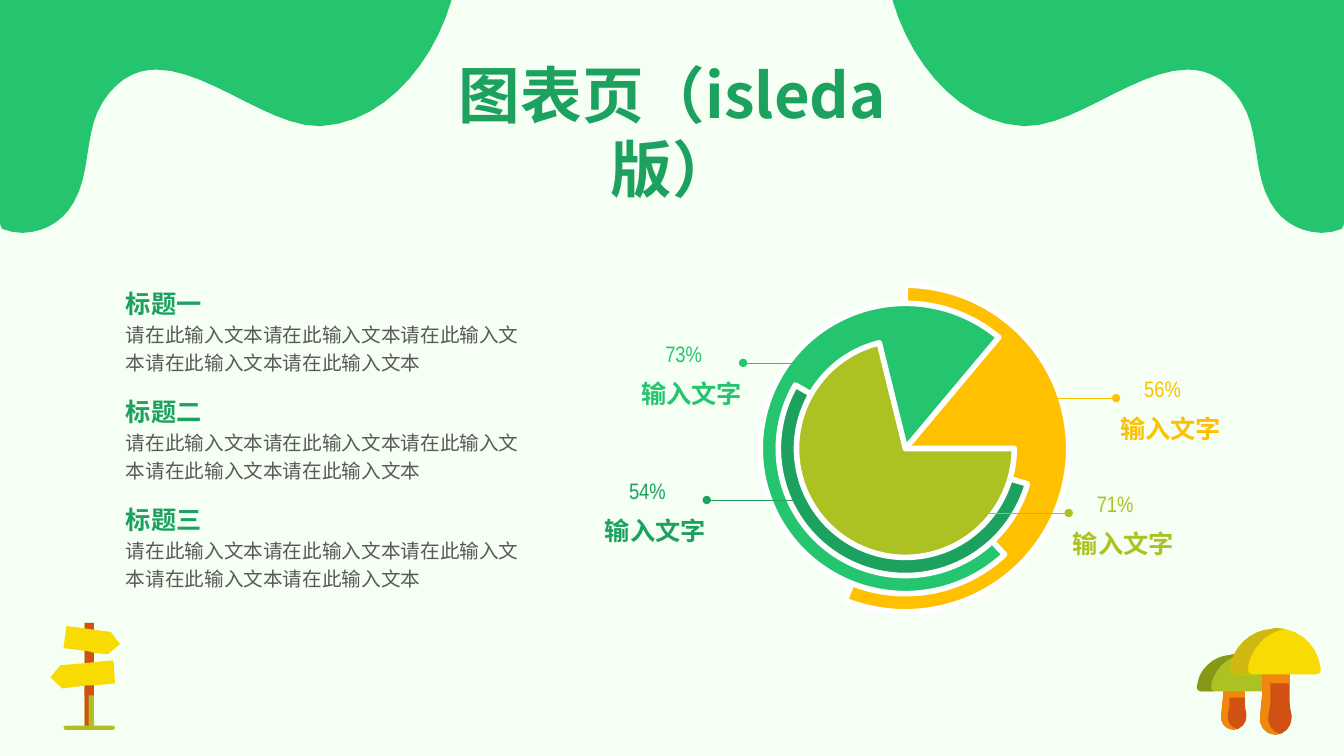
"""Build a chart slide with layered pies, callouts, captions and woodland decoration."""
from dataclasses import dataclass
from math import ceil, dist, sqrt

from lxml import etree
from pptx import Presentation
from pptx.dml.color import RGBColor
from pptx.enum.shapes import MSO_CONNECTOR, MSO_SHAPE
from pptx.enum.text import MSO_ANCHOR, MSO_AUTO_SIZE, PP_ALIGN
from pptx.oxml.ns import qn
from pptx.shapes.autoshape import Shape
from pptx.shapes.shapetree import GroupShapes
from pptx.util import Cm, Length, Pt

RECT, ROUND, PIE = MSO_SHAPE.RECTANGLE, MSO_SHAPE.ROUNDED_RECTANGLE, MSO_SHAPE.PIE
STRAIGHT = MSO_CONNECTOR.STRAIGHT
TOP, MIDDLE = MSO_ANCHOR.TOP, MSO_ANCHOR.MIDDLE
LEFT, CENTER = PP_ALIGN.LEFT, PP_ALIGN.CENTER
GROW = MSO_AUTO_SIZE.SHAPE_TO_FIT_TEXT

MINT = RGBColor(0xF5, 0xFF, 0xF3)
WHITE = RGBColor(0xFF, 0xFF, 0xFF)
GREEN = RGBColor(0x25, 0xC5, 0x6F)
FOREST = RGBColor(0x1C, 0xA1, 0x5F)
AMBER = RGBColor(0xFF, 0xC0, 0x00)
LIME = RGBColor(0xAD, 0xC2, 0x22)
OLIVE = RGBColor(0x87, 0x98, 0x19)
YELLOW = RGBColor(0xF8, 0xDB, 0x03)
MUSTARD = RGBColor(0xCF, 0xB8, 0x0F)
ORANGE = RGBColor(0xF0, 0x88, 0x0D)
RUST = RGBColor(0xD1, 0x51, 0x12)
GREY = RGBColor(0x59, 0x59, 0x59)

CJK, NARROW = "Noto Sans CJK JP", "Arial Narrow"
WIDTH, HEIGHT = 13.33, 7.5
Outline = list[tuple[float, ...]]

WAVE: Outline = [
    (0.22, 2.31), (0.12, 2.3), (0.02, 2.27), (0, 2.22), (0, -2.38), (3.18, -2.38),
    (4.06, -2.02, 4.72, -1.13, 4.51, -0.13), (4.38, 0.5, 3.88, 1.21, 3.19, 1.25),
    (3.15, 1.25), (2.67, 1.25, 2.06, 0.69, 1.55, 0.69),
    (1.35, 0.69, 1.17, 0.78, 1.02, 1.01), (0.83, 1.31, 0.91, 1.7, 0.73, 2.01),
    (0.64, 2.17, 0.49, 2.27, 0.32, 2.3)]
UPPER_SIGN: Outline = [(0.66, 6.21), (0.63, 6.43), (0.87, 6.46), (0.95, 6.48), (1.07, 6.49),
                       (1.19, 6.39), (1.1, 6.27)]
LOWER_SIGN: Outline = [(1.12, 6.55), (0.83, 6.58), (0.6, 6.6), (0.5, 6.72), (0.62, 6.83),
                       (0.86, 6.8), (0.94, 6.8), (1.14, 6.78), (1.13, 6.59)]

CAP_EDGE: Outline = [(0.45, 0), (0.41, 0.01), (0.25, 0.02, 0.11, 0.12, 0.04, 0.26),
                     (0.02, 0.31, 0.01, 0.36, 0, 0.41), (0, 0.43, 0.02, 0.46, 0.05, 0.46)]
CAP = CAP_EDGE + [(0.86, 0.46), (0.89, 0.46, 0.9, 0.43, 0.9, 0.41), (0.88, 0.18, 0.69, 0, 0.45, 0)]
CAP_SHADE = CAP_EDGE + [
    (0.22, 0.46), (0.19, 0.46, 0.17, 0.43, 0.18, 0.41), (0.18, 0.36, 0.19, 0.31, 0.22, 0.26),
    (0.28, 0.13, 0.4, 0.04, 0.54, 0.01)]
STEM_EDGE: Outline = [(0.05, -0.6), (0.05, -0.41), (0.04, -0.31), (0.03, -0.2),
                      (0, -0.1, 0.08, 0, 0.18, 0)]
STEM = STEM_EDGE + [(0.27, 0, 0.34, -0.08, 0.34, -0.16), (0.34, -0.2),
                    (0.32, -0.27, 0.32, -0.34, 0.32, -0.41), (0.32, -0.6)]
STEM_SHADE = STEM_EDGE + [(0.22, -0.01), (0.14, -0.03, 0.09, -0.11, 0.11, -0.2),
                          (0.13, -0.31), (0.13, -0.41), (0.13, -0.6)]
COLLAR: Outline = [(0.2, -0.04), (0.05, 0), (0.05, 0.09), (0.32, 0.09), (0.32, 0)]


@dataclass
class Slice:
    color: RGBColor
    diameter: float
    start: float
    end: float


@dataclass
class Callout:
    color: RGBColor
    percent: str
    start_x: float
    dot_x: float
    y: float


@dataclass
class Mushroom:
    cap: tuple[float, float]
    stem: tuple[float, float]
    stem_top: float
    scale: float
    color: RGBColor
    shade: RGBColor


SLICES = [Slice(AMBER, 3.24, 270, 111.6), Slice(GREEN, 2.88, 46.92, 310),
          Slice(FOREST, 2.52, 16.15, 210), Slice(LIME, 2.16, 0, 256.15)]
CALLOUTS = [Callout(AMBER, "56%", 9.93, 11.07, 3.95), Callout(GREEN, "73%", 8.13, 7.37, 3.6),
            Callout(FOREST, "54%", 7.94, 7.01, 4.96), Callout(LIME, "71%", 9.47, 10.6, 5.09)]
MUSHROOMS = [Mushroom((11.87, 6.49), (12.09, 7.24), 6.85, 0.8, LIME, OLIVE),
             Mushroom((12.2, 6.23), (12.47, 7.29), 6.69, 1, YELLOW, MUSTARD)]
POST = [(LIME, 0.09, 6.18, 7.22), (RUST, 0.04, 6.81, 7.22), (RUST, 0.09, 6.75, 6.9),
        (RUST, 0.09, 6.18, 6.25), (RUST, 0.09, 6.4, 6.65)]


def cm(inches: float) -> Length:
    """Turn inches into a centimetre length."""
    return Cm(inches * 2.54)


def paint(sp: Shape, color: RGBColor) -> None:
    """Give a shape a plain fill without line or shadow."""
    sp.shadow.inherit = False
    sp.fill.solid()
    sp.fill.fore_color.rgb = color
    sp.line.fill.background()


def add_block(shapes: GroupShapes, kind: MSO_SHAPE, x: float, y: float, w: float, h: float,
              color: RGBColor) -> Shape:
    """Add a filled preset shape."""
    sp = shapes.add_shape(kind, cm(x), cm(y), cm(w), cm(h))
    paint(sp, color)
    return sp


def add_outline(shapes: GroupShapes, outline: Outline, color: RGBColor,
                origin: tuple[float, float] = (0, 0), scale_x: float = 1, scale_y: float = 1,
                top: float = -HEIGHT) -> None:
    """Add a closed outline whose six-number entries are Bezier curves."""
    points = [outline[0]]
    for entry in outline[1:]:
        if len(entry) == 2:
            points.append(entry)
            continue
        curve = points[-1] + entry
        steps = ceil(8 * sqrt(dist(curve[:2], curve[-2:])))
        for t in (n / steps for n in range(1, steps + 1)):
            weights = ((1 - t) ** 3, 3 * t * (1 - t) ** 2, 3 * t * t * (1 - t), t ** 3)
            points.append(tuple(sum(w * c for w, c in zip(weights, curve[axis::2])) for axis in (0, 1)))
    placed = [(cm(origin[0] + scale_x * x), cm(max(top, origin[1] + scale_y * y))) for x, y in points]
    builder = shapes.build_freeform(*placed[0])
    builder.add_line_segments(placed[1:], close=True)
    paint(builder.convert_to_shape(), color)


def add_text(shapes: GroupShapes, text: str, x: float, y: float, w: float, h: float, size: float,
             color: RGBColor, font: str = CJK, bold: bool = False, align: PP_ALIGN = LEFT,
             anchor: MSO_ANCHOR = MIDDLE, inset: tuple[float, float] = (0.1, 0.1),
             wrap: bool = False, spacing: float = 1, after: float = 0) -> Shape:
    """Add a one-paragraph text box."""
    sp = shapes.add_textbox(cm(x), cm(y), cm(w), cm(h))
    tf = sp.text_frame
    tf.word_wrap, tf.vertical_anchor = wrap, anchor
    tf.margin_left = tf.margin_right = cm(inset[0])
    tf.margin_top = tf.margin_bottom = cm(inset[1])
    p = tf.paragraphs[0]
    p.text, p.alignment, p.line_spacing, p.space_after = text, align, spacing, Pt(after)
    p.font.size, p.font.bold, p.font.name = Pt(size), bold, font
    p.font.color.rgb = color
    etree.SubElement(p._p.pPr.find(qn("a:defRPr")), qn("a:ea"), typeface=font)
    return sp


def add_slice(shapes: GroupShapes, pie: Slice) -> None:
    """Add one white-edged pie around the common centre."""
    d = pie.diameter
    sp = add_block(shapes, PIE, 8.98 - d / 2, 4.45 - d / 2, d, d, pie.color)
    sp.adjustments[0], sp.adjustments[1] = pie.start * 0.6, pie.end * 0.6
    sp.line.color.rgb, sp.line.width = WHITE, Pt(4)


def add_callout(shapes: GroupShapes, c: Callout) -> None:
    """Add a dotted leader line with its percentage and label."""
    line = shapes.add_connector(STRAIGHT, cm(c.start_x), cm(c.y), cm(c.dot_x), cm(c.y))
    line.line.color.rgb, line.line.width = c.color, Pt(0.5)
    props = line._element.spPr
    etree.SubElement(props.find(qn("a:ln")), qn("a:tailEnd"), type="oval")
    etree.SubElement(props, qn("a:effectLst"))
    x = c.dot_x + (0.03 if c.dot_x > c.start_x else -1.02)
    add_text(shapes, c.percent, x + 0.15, c.y - 0.35, 0.72, 0.51, 16, c.color, NARROW)
    add_text(shapes, "输入文字", x, c.y + 0.17, 1.02, 0.27, 18, c.color, bold=True,
             align=CENTER, inset=(0, 0))


def add_mushroom(shapes: GroupShapes, m: Mushroom) -> None:
    """Add a mushroom from stem to cap."""
    for outline, color in ((STEM, RUST), (STEM_SHADE, ORANGE)):
        add_outline(shapes, outline, color, m.stem, m.scale, m.scale, m.stem_top)
    add_outline(shapes, COLLAR, ORANGE, (m.stem[0], m.stem_top), m.scale, m.scale)
    for outline, color in ((CAP, m.color), (CAP_SHADE, m.shade)):
        add_outline(shapes, outline, color, m.cap, m.scale, m.scale)


def main() -> None:
    """Draw the slide and save it."""
    prs = Presentation()
    prs.slide_width, prs.slide_height = cm(WIDTH), cm(HEIGHT)
    s = prs.slides.add_slide(prs.slide_layouts[6])
    s.background.fill.solid()
    s.background.fill.fore_color.rgb = MINT
    add_outline(s.shapes, WAVE, GREEN, (WIDTH, 0), scale_x=-1)
    add_outline(s.shapes, WAVE, GREEN)
    add_text(s.shapes, "图表页（isleda版）", 4.31, 0.84, 4.72, 0.92, 44, FOREST, bold=True,
             align=CENTER, wrap=True)
    for pie in SLICES:
        add_slice(s.shapes, pie)
    for callout in CALLOUTS:
        add_callout(s.shapes, callout)
    for color, width, top, bottom in POST:
        add_block(s.shapes, RECT, 0.84, top, width, bottom - top, color)
    for sign in (UPPER_SIGN, LOWER_SIGN):
        add_outline(s.shapes, sign, YELLOW)
    add_block(s.shapes, ROUND, 0.63, 7.2, 0.51, 0.04, LIME).adjustments[0] = 0.5
    for mushroom in MUSHROOMS:
        add_mushroom(s.shapes, mushroom)
    for i, heading in enumerate(("标题一", "标题二", "标题三")):
        y = 2.75 + 1.07 * i
        add_text(s.shapes, "请在此输入文本" * 5, 1.15, y + 0.31, 4.2, 0.64, 14, GREY,
                 anchor=TOP, wrap=True, spacing=1.2, after=10)
        sp = add_text(s.shapes, heading, 1.15, y, 0.95, 0.44, 18, FOREST, bold=True,
                      anchor=TOP, inset=(0.1, 0.05), spacing=1.2)
        sp.text_frame.auto_size = GROW
    prs.save("out.pptx")


if __name__ == "__main__":
    main()
